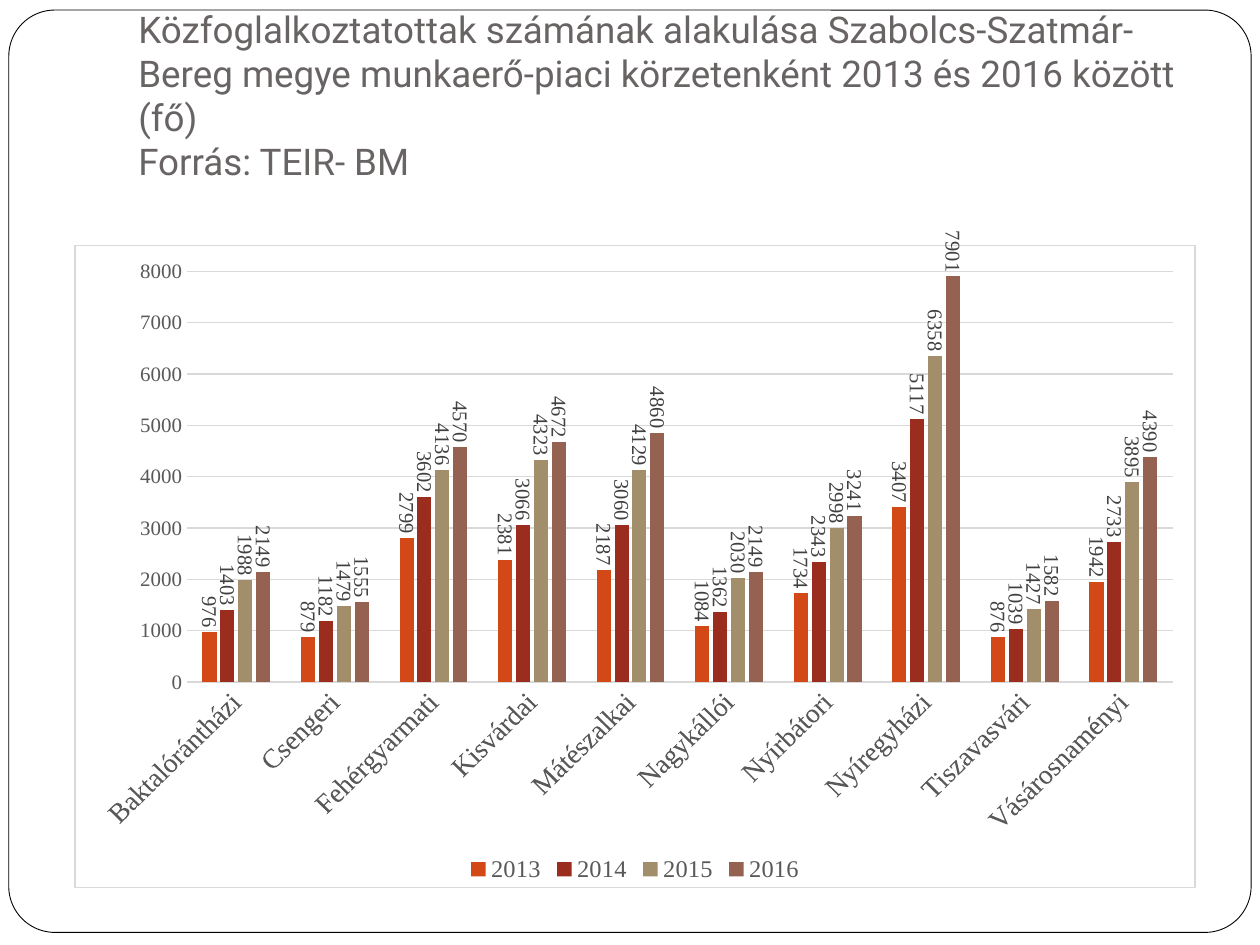
from dataclasses import dataclass

from pptx import Presentation
from pptx.chart.data import CategoryChartData
from pptx.dml.color import RGBColor
from pptx.enum.chart import XL_CHART_TYPE, XL_LABEL_POSITION, XL_LEGEND_POSITION, XL_TICK_MARK
from pptx.enum.shapes import MSO_SHAPE
from pptx.enum.text import MSO_ANCHOR
from pptx.oxml import parse_xml
from pptx.oxml.ns import nsdecls
from pptx.util import Inches, Pt


@dataclass(frozen=True)
class Theme:
    title_font: str = "Roboto"
    chart_font: str = "Times New Roman"
    paper: str = "FFFFFF"
    frame: str = "000000"
    title: str = "696464"
    text: str = "595959"
    label: str = "404040"
    rule: str = "D9D9D9"
    bars: tuple = ("D34817", "9B2D1F", "A28E6A", "956251")
    title_size: int = 21
    category_size: int = 16
    legend_size: int = 14
    small_size: int = 12
    base_size: int = 10
    frame_width: float = 0.5
    rule_width: float = 0.75


THEME = Theme()

TITLE_LINES = (
    "Közfoglalkoztatottak számának alakulása Szabolcs-Szatmár-Bereg megye "
    "munkaerő-piaci körzetenként 2013 és 2016 között (fő)",
    "Forrás: TEIR- BM",
)
DISTRICTS = (
    "Baktalórántházi", "Csengeri", "Fehérgyarmati", "Kisvárdai", "Mátészalkai",
    "Nagykállói", "Nyírbátori", "Nyíregyházi", "Tiszavasvári", "Vásárosnaményi",
)
WORKERS = {
    "2013": (976, 879, 2799, 2381, 2187, 1084, 1734, 3407, 876, 1942),
    "2014": (1403, 1182, 3602, 3066, 3060, 1362, 2343, 5117, 1039, 2733),
    "2015": (1988, 1479, 4136, 4323, 4129, 2030, 2998, 6358, 1427, 3895),
    "2016": (2149, 1555, 4570, 4672, 4860, 2149, 3241, 7901, 1582, 4390),
}


def style_font(font, name, size, color):
    font.name = name
    font.size = Pt(size)
    font.bold = False
    font.color.rgb = RGBColor.from_string(color)


def style_line(line, color, width):
    line.color.rgb = RGBColor.from_string(color)
    line.width = Pt(width)


def add_frame(page):
    frame = page.shapes.add_shape(
        MSO_SHAPE.ROUNDED_RECTANGLE, Inches(0.07), Inches(0.08), Inches(9.86), Inches(7.32))
    frame.adjustments[0] = 0.05
    frame.shadow.inherit = False
    frame.fill.solid()
    frame.fill.fore_color.rgb = RGBColor.from_string(THEME.paper)
    style_line(frame.line, THEME.frame, THEME.frame_width)


def add_title(page):
    box = page.shapes.add_textbox(Inches(1), Inches(0.3), Inches(8.5), Inches(1.25))
    text = box.text_frame
    text.word_wrap = True
    text.vertical_anchor = MSO_ANCHOR.BOTTOM
    text.margin_bottom = Inches(0.1)
    para = text.paragraphs[0]
    for index, line in enumerate(TITLE_LINES):
        if index:
            para.add_line_break()
        span = para.add_run()
        span.text = line
        style_font(span.font, THEME.title_font, THEME.title_size, THEME.title)


def style_axes(chart):
    category, value = chart.category_axis, chart.value_axis
    for axis, size in ((category, THEME.category_size), (value, THEME.small_size)):
        axis.major_tick_mark = axis.minor_tick_mark = XL_TICK_MARK.NONE
        style_font(axis.tick_labels.font, THEME.chart_font, size, THEME.text)
    style_line(category.format.line, THEME.rule, THEME.rule_width)
    value.format.line.fill.background()
    value.minimum_scale, value.maximum_scale, value.major_unit = 0, 8000, 1000
    value.tick_labels.number_format = "0"
    value.tick_labels.number_format_is_linked = False
    value.has_major_gridlines = True
    style_line(value.major_gridlines.format.line, THEME.rule, THEME.rule_width)


def style_series(plot):
    plot.gap_width, plot.overlap, plot.vary_by_categories = 219, -27, False
    for series, color in zip(plot.series, THEME.bars):
        series.format.fill.solid()
        series.format.fill.fore_color.rgb = RGBColor.from_string(color)
        series.invert_if_negative = False
        labels = series.data_labels
        labels.show_value = True
        labels.position = XL_LABEL_POSITION.OUTSIDE_END
        labels.number_format = "0"
        labels.number_format_is_linked = False
        style_font(labels.font, THEME.chart_font, THEME.small_size, THEME.label)


def rotate_text(chart, owner, degrees):
    for body in chart.element.xpath(f".//{owner}/c:txPr/a:bodyPr"):
        body.set("rot", str(degrees * 60000))
        body.set("vert", "horz")


def place_plot(chart, **fractions):
    area = chart.element.xpath("c:chart/c:plotArea")[0]
    for old in area.xpath("c:layout"):
        area.remove(old)
    sizes = "".join(f'<c:{key} val="{value}"/>' for key, value in fractions.items())
    area.insert(0, parse_xml(
        f'<c:layout {nsdecls("c")}><c:manualLayout><c:layoutTarget val="inner"/>'
        f'<c:xMode val="edge"/><c:yMode val="edge"/>{sizes}</c:manualLayout></c:layout>'))


def add_border(chart):
    chart.element.xpath("c:chart")[0].addnext(parse_xml(
        f'<c:spPr {nsdecls("c", "a")}>'
        f'<a:solidFill><a:srgbClr val="{THEME.paper}"/></a:solidFill>'
        f'<a:ln w="{Pt(THEME.rule_width)}"><a:solidFill>'
        f'<a:srgbClr val="{THEME.rule}"/></a:solidFill></a:ln></c:spPr>'))


def add_workers_chart(page):
    data = CategoryChartData(number_format="0")
    data.categories = DISTRICTS
    for year, counts in WORKERS.items():
        data.add_series(year, counts)
    chart = page.shapes.add_chart(
        XL_CHART_TYPE.COLUMN_CLUSTERED,
        Inches(0.59), Inches(1.83), Inches(8.9), Inches(5.22), data).chart
    style_font(chart.font, THEME.chart_font, THEME.base_size, THEME.frame)
    chart.has_title = False
    style_axes(chart)
    style_series(chart.plots[0])

    # Legend
    chart.has_legend = True
    chart.legend.position = XL_LEGEND_POSITION.BOTTOM
    chart.legend.include_in_layout = False
    style_font(chart.legend.font, THEME.chart_font, THEME.legend_size, THEME.text)

    # Slanted district names, upright value labels, plot position and border
    rotate_text(chart, "c:catAx", -45)
    rotate_text(chart, "c:dLbls", 90)
    place_plot(chart, x=0.1, y=0.04, w=0.88, h=0.64)
    add_border(chart)


def main():
    deck = Presentation()
    deck.slide_width, deck.slide_height = Inches(10), Inches(7.5)
    page = deck.slides.add_slide(deck.slide_layouts[6])
    add_frame(page)
    add_title(page)
    add_workers_chart(page)
    deck.save("out.pptx")


if __name__ == "__main__":
    main()
